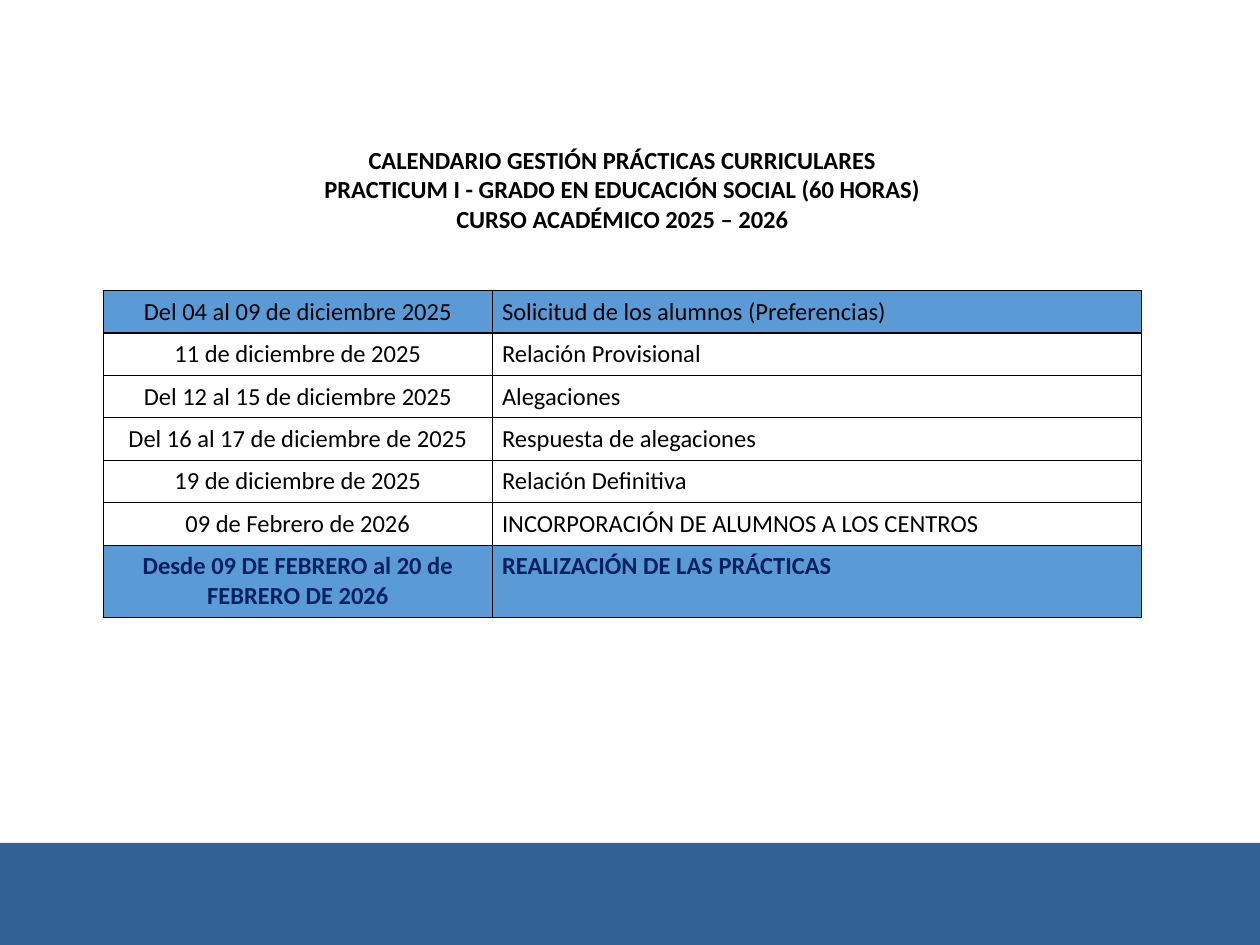
from dataclasses import dataclass

from lxml import etree
from pptx import Presentation
from pptx.dml.color import RGBColor
from pptx.enum import shapes, text
from pptx.oxml import ns
from pptx.util import Pt


@dataclass(frozen=True)
class Theme:
    font: str = "Calibri"
    size: int = 14
    ink: str = "000000"
    navy: str = "002060"
    mark: str = "5B9BD5"
    band: str = "326195"
    line: float = 0.75


THEME = Theme()
ALIGN = text.PP_ALIGN

TITLE = (
    "CALENDARIO GESTIÓN PRÁCTICAS CURRICULARES",
    "PRACTICUM I - GRADO EN EDUCACIÓN SOCIAL (60 HORAS)",
    "CURSO ACADÉMICO 2025 – 2026",
)
DATES = (
    ("Del 04 al 09 de diciembre 2025", "Solicitud de los alumnos (Preferencias)"),
    ("11 de diciembre de 2025", "Relación Provisional"),
    ("Del 12 al 15 de diciembre 2025", "Alegaciones"),
    ("Del 16 al 17 de diciembre de 2025", "Respuesta de alegaciones"),
    ("19 de diciembre de 2025", "Relación Definitiva"),
    ("09 de Febrero de 2026", "INCORPORACIÓN DE ALUMNOS A LOS CENTROS"),
    ("Desde 09 DE FEBRERO al 20 de FEBRERO DE 2026", "REALIZACIÓN DE LAS PRÁCTICAS"),
)
MIDDLE = 4  # the first rows are centred vertically


def style(frame, align, color=THEME.ink, bold=False):
    for para in frame.paragraphs:
        para.alignment = align
        for run in para.runs:
            font = run.font
            font.name, font.size, font.bold = THEME.font, Pt(THEME.size), bold
            font.color.rgb = RGBColor.from_string(color)


def add_band(slide):
    band = slide.shapes.add_shape(
        shapes.MSO_SHAPE.RECTANGLE, 0, Pt(481.7), Pt(720), Pt(58.3))
    band.shadow.inherit = False
    band.fill.solid()
    band.fill.fore_color.rgb = RGBColor.from_string(THEME.band)
    band.line.fill.background()


def add_title(slide):
    title = slide.shapes.title
    title.left, title.top = Pt(6.5), Pt(79.2)
    title.width, title.height = Pt(698.4), Pt(58.3)
    frame = title.text_frame
    frame.text = "\n".join(TITLE)
    frame.word_wrap = True
    frame.auto_size = text.MSO_AUTO_SIZE.NONE
    frame.vertical_anchor = text.MSO_ANCHOR.TOP
    style(frame, ALIGN.CENTER, bold=True)


def add_border(cell):
    props = cell._tc.get_or_add_tcPr()
    for side in ("lnL", "lnR", "lnT", "lnB"):
        line = etree.SubElement(props, ns.qn(f"a:{side}"), w=str(Pt(THEME.line)))
        fill = etree.SubElement(line, ns.qn("a:solidFill"))
        etree.SubElement(fill, ns.qn("a:srgbClr"), val=THEME.ink)


def fill_cell(cell, words, align, marked, last, anchor):
    cell.text = words
    cell.margin_left = cell.margin_right = Pt(5.4)
    cell.margin_top = cell.margin_bottom = Pt(3.6)
    cell.vertical_anchor = anchor
    style(cell.text_frame, align, THEME.navy if last else THEME.ink, last)
    add_border(cell)
    if marked:
        cell.fill.solid()
        cell.fill.fore_color.rgb = RGBColor.from_string(THEME.mark)
    else:
        cell.fill.background()


def add_dates(slide):
    widths, low, high = (222.5, 370.8), 24, 41
    end = len(DATES) - 1
    table = slide.shapes.add_table(
        len(DATES), len(widths), Pt(59), Pt(166),
        Pt(sum(widths)), Pt(low * end + high)).table
    table.first_row = table.horz_banding = False
    for col, width in zip(table.columns, widths):
        col.width = Pt(width)
    for i, row in enumerate(DATES):
        table.rows[i].height = Pt(high if i == end else low)
        upper = i < MIDDLE
        anchor = text.MSO_ANCHOR.MIDDLE if upper else text.MSO_ANCHOR.TOP
        aligns = (ALIGN.CENTER, ALIGN.LEFT if upper else ALIGN.JUSTIFY)
        for j, words in enumerate(row):
            fill_cell(table.cell(i, j), words, aligns[j],
                      i in (0, end), i == end, anchor)


def main():
    deck = Presentation()
    deck.slide_width, deck.slide_height = Pt(720), Pt(540)
    slide = deck.slides.add_slide(deck.slide_layouts[5])
    # Footer band
    add_band(slide)
    # Heading
    add_title(slide)
    # Calendar
    add_dates(slide)
    deck.save("out.pptx")


if __name__ == "__main__":
    main()
